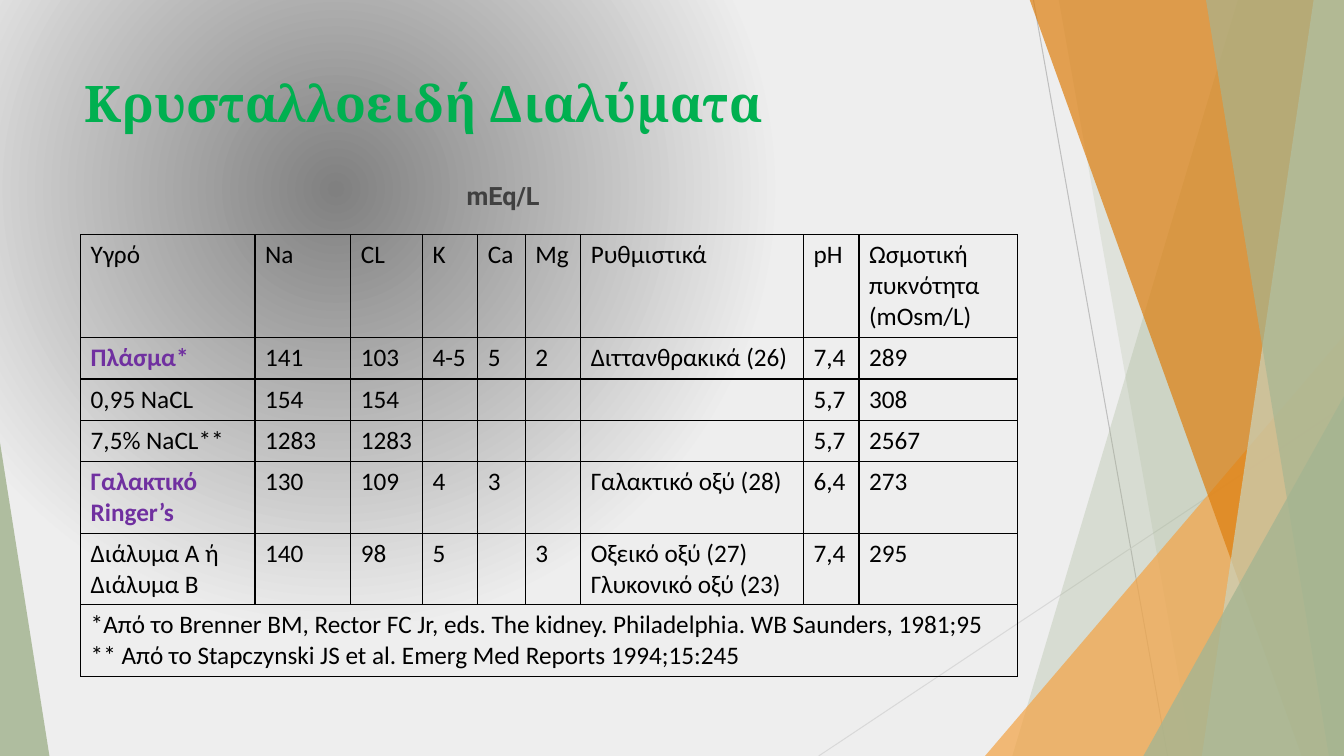
from lxml.etree import SubElement
from pptx import Presentation
from pptx.dml.color import RGBColor
from pptx.enum.shapes import MSO_CONNECTOR as Connector, MSO_SHAPE as Shape
from pptx.enum.text import MSO_ANCHOR as Anchor, PP_ALIGN as Align
from pptx.oxml import parse_xml
from pptx.oxml.ns import nsdecls, qn
from pptx.util import Inches, Pt

WIDTH, HEIGHT = 13.33, 7.5
GREEN, ORANGE, PURPLE = "A5B592", "F3A447", "7030A0"

COLUMN_WIDTHS = [1.73, 0.95, 0.71, 0.55, 0.47, 0.55, 2.21, 0.55, 1.57]
ROW_HEIGHTS = [1.02, 0.41, 0.41, 0.41, 0.7, 0.71, 0.71]
SOLUTIONS = [
    ["Υγρό", "Na", "CL", "K", "Ca", "Mg", "Ρυθμιστικά", "pH", "Ωσμοτική πυκνότητα (mOsm/L)"],
    ["Πλάσμα*", "141", "103", "4-5", "5", "2", "Διττανθρακικά (26)", "7,4", "289"],
    ["0,95 NaCL", "154", "154", "", "", "", "", "5,7", "308"],
    ["7,5% NaCL**", "1283", "1283", "", "", "", "", "5,7", "2567"],
    ["Γαλακτικό Ringer’s", "130", "109", "4", "3", "", "Γαλακτικό οξύ (28)", "6,4", "273"],
    ["Διάλυμα Α ή Διάλυμα Β", "140", "98", "5", "", "3",
     "Οξεικό οξύ (27)\nΓλυκονικό οξύ (23)", "7,4", "295"],
]
HIGHLIGHTED = {"Πλάσμα*", "Γαλακτικό Ringer’s"}
REFERENCES = (
    "*Από το Brenner BM, Rector FC Jr, eds. The kidney. Philadelphia. WB Saunders, 1981;95\n"
    "** Από το Stapczynski JS et al. Emerg Med Reports 1994;15:245"
)


def color(value):
    return RGBColor.from_string(value)


def write_text(frame, text, size=18, font="Calibri", fill="000000", bold=False, align=Align.LEFT):
    frame.word_wrap = True
    frame.text = text
    for paragraph in frame.paragraphs:
        paragraph.alignment = align
        paragraph.font.size = Pt(size)
        paragraph.font.name = font
        paragraph.font.bold = bold
        paragraph.font.color.rgb = color(fill)


def paint(shape, fill, opacity):
    shape.shadow.inherit = False
    shape.fill.solid()
    shape.fill.fore_color.rgb = color(fill)
    shape.line.fill.background()
    tint = shape.element.spPr.find(".//" + qn("a:srgbClr"))
    SubElement(tint, qn("a:alpha"), val=str(opacity * 1000))


def add_panel(slide, top_x, bottom_x, fill, opacity):
    top = -0.01
    corners = [(WIDTH, top), (WIDTH, HEIGHT), (bottom_x, HEIGHT)]
    builder = slide.shapes.build_freeform(Inches(top_x), Inches(top))
    builder.add_line_segments([(Inches(x), Inches(y)) for x, y in corners])
    paint(builder.convert_to_shape(), fill, opacity)


def add_triangle(slide, left, top, width, apex, fill, opacity):
    shape = slide.shapes.add_shape(
        Shape.ISOSCELES_TRIANGLE, Inches(left), Inches(top), Inches(width), Inches(HEIGHT - top))
    shape.adjustments[0] = apex
    paint(shape, fill, opacity)


def add_thin_line(slide, x1, y1, x2, y2, fill):
    line = slide.shapes.add_connector(
        Connector.STRAIGHT, Inches(x1), Inches(y1), Inches(x2), Inches(y2))
    line.line.color.rgb = color(fill)
    line.line.width = Pt(0.75)
    SubElement(line.element.spPr, qn("a:effectLst"))


def add_background(slide):
    fill = slide.background.fill
    fill.gradient()
    for stop, (position, value) in zip(fill.gradient_stops, [(0, "808080"), (0.58, "EEEEEE")]):
        stop.position = position
        stop.color.rgb = color(value)
    linear = slide.element.find(".//" + qn("a:lin"))
    linear.getparent().replace(linear, parse_xml(
        f'<a:path {nsdecls("a")} path="circle">'
        '<a:fillToRect l="50000" t="50000" r="100000" b="100000"/></a:path>'))


def add_decoration(slide):
    add_thin_line(slide, 10.25, 0, 11.58, HEIGHT, "BFBFBF")
    add_thin_line(slide, WIDTH, 4.03, 8.12, HEIGHT, "D9D9D9")
    add_panel(slide, 12.28, 10.04, GREEN, 30)
    add_panel(slide, 10.5, 11.83, GREEN, 20)
    add_triangle(slide, 9.77, 3.33, 3.56, 1, ORANGE, 72)
    add_panel(slide, 10.21, 12.91, "DD7E0E", 70)
    add_panel(slide, 13.03, 11.92, "C9D3BE", 70)
    add_panel(slide, 11.96, 13.18, GREEN, 65)
    add_triangle(slide, 11.34, 3.93, 1.99, 1, GREEN, 80)
    add_triangle(slide, 0, 4.39, 0.49, 0, GREEN, 85)


def add_title(slide, left, top, width, height):
    title = slide.shapes.title
    title.left, title.top = Inches(left), Inches(top)
    title.width, title.height = Inches(width), Inches(height)
    title.text_frame.vertical_anchor = Anchor.TOP
    write_text(title.text_frame, "Κρυσταλλοειδή Διαλύματα",
               size=36, font="Cambria", fill="00B050", bold=True)
    slide.shapes.element.append(title.element)


def format_cell(cell):
    cell.fill.background()
    properties = cell._tc.get_or_add_tcPr()
    for index, side in enumerate(["lnL", "lnR", "lnT", "lnB"]):
        properties.insert(index, parse_xml(
            f'<a:{side} {nsdecls("a")} w="12700"><a:solidFill>'
            f'<a:srgbClr val="000000"/></a:solidFill></a:{side}>'))


def add_solution_table(slide, left, top):
    table = slide.shapes.add_table(
        len(ROW_HEIGHTS), len(COLUMN_WIDTHS), Inches(left), Inches(top),
        Inches(sum(COLUMN_WIDTHS)), Inches(sum(ROW_HEIGHTS))).table
    table.first_row = table.horz_banding = False
    for column, width in zip(table.columns, COLUMN_WIDTHS):
        column.width = Inches(width)
    for row, height in zip(table.rows, ROW_HEIGHTS):
        row.height = Inches(height)
    for cell in table.iter_cells():
        format_cell(cell)
    for row, values in zip(table.rows, SOLUTIONS):
        for cell, value in zip(row.cells, values):
            marked = value in HIGHLIGHTED
            write_text(cell.text_frame, value, fill=PURPLE if marked else "000000", bold=marked)
    last_row = len(SOLUTIONS)
    footer = table.cell(last_row, 0)
    footer.merge(table.cell(last_row, len(COLUMN_WIDTHS) - 1))
    write_text(footer.text_frame, REFERENCES)


def add_unit_label(slide, left, top, width, height):
    box = slide.shapes.add_textbox(Inches(left), Inches(top), Inches(width), Inches(height))
    write_text(box.text_frame, "mEq/L", font="Roboto", fill="404040", bold=True, align=Align.CENTER)


def main():
    presentation = Presentation()
    presentation.slide_width = Inches(WIDTH)
    presentation.slide_height = Inches(HEIGHT)
    slide = presentation.slides.add_slide(presentation.slide_layouts.get_by_name("Title Only"))
    add_background(slide)
    add_decoration(slide)
    add_title(slide, 0.74, 0.67, 9.4, 1.44)
    add_solution_table(slide, 0.8, 2.33)
    add_unit_label(slide, 0.49, 1.74, 9, 0.47)
    presentation.save("out.pptx")


if __name__ == "__main__":
    main()
